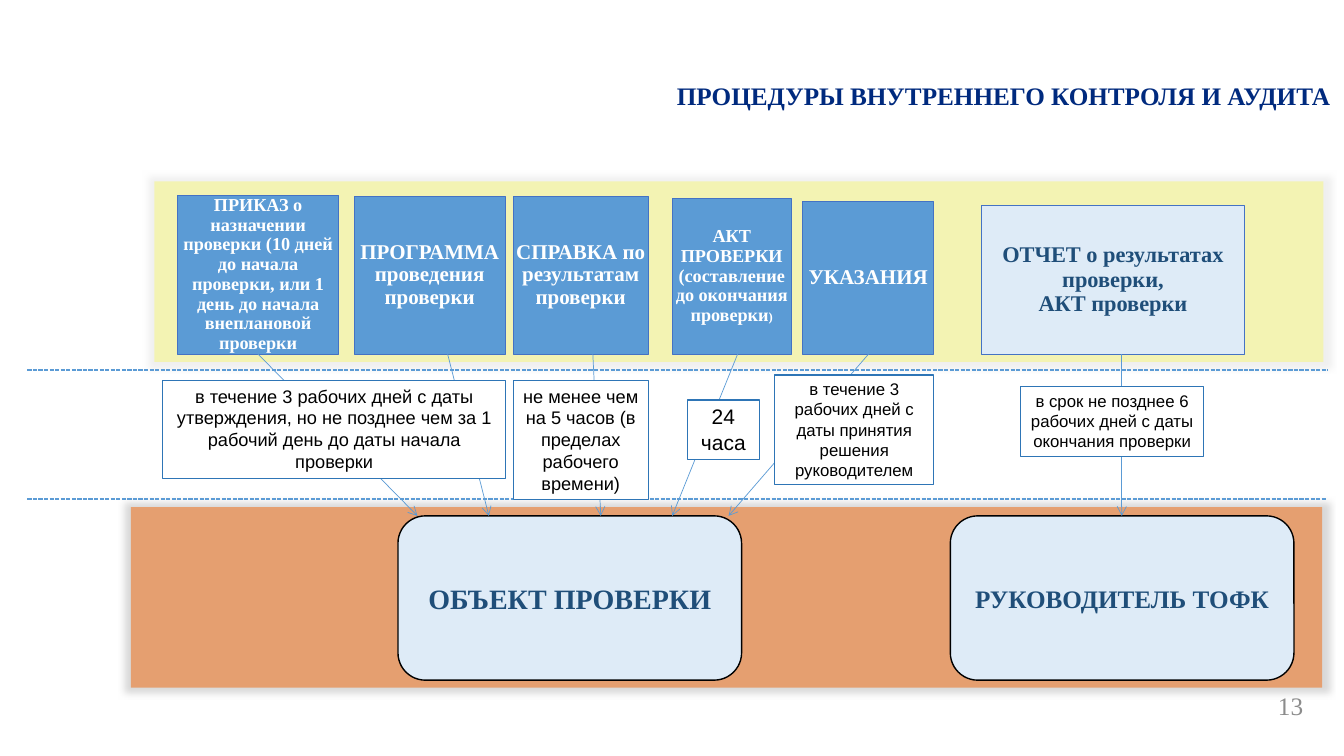
from lxml import etree
from pptx import Presentation
from pptx.dml.color import RGBColor
from pptx.enum.dml import MSO_LINE
from pptx.enum.shapes import MSO_CONNECTOR, MSO_SHAPE
from pptx.enum.text import MSO_ANCHOR, PP_ALIGN
from pptx.oxml.ns import qn
from pptx.util import Cm, Pt

RECT, ROUND = MSO_SHAPE.RECTANGLE, MSO_SHAPE.ROUNDED_RECTANGLE
MIDDLE, TOP = MSO_ANCHOR.MIDDLE, MSO_ANCHOR.TOP
CENTER, RIGHT = PP_ALIGN.CENTER, PP_ALIGN.RIGHT
STRAIGHT, DASH = MSO_CONNECTOR.STRAIGHT, MSO_LINE.SQUARE_DOT
SERIF, SANS = "Times New Roman", "Arial"
BLUE, PALE, NAVY, WHITE = "5B9BD5", "DEEBF7", "1F4E79", "FFFFFF"

prs = Presentation()
prs.slide_width, prs.slide_height = Cm(33.87), Cm(19.05)
slide = prs.slides.add_slide(prs.slide_layouts[6])
shapes = slide.shapes
rgb = RGBColor.from_string


def box(kind, place, fill, edge=None, width=0.5):
    shape = shapes.add_shape(kind, *map(Cm, place))
    shape.shadow.inherit = False
    shape.fill.solid()
    shape.fill.fore_color.rgb = rgb(fill)
    if edge:
        shape.line.color.rgb = rgb(edge)
        shape.line.width = Pt(width)
    else:
        shape.line.fill.background()
    return shape


def write(shape, text, size, color, font=SERIF, bold=True, align=CENTER,
          anchor=MIDDLE, pad=(0.2, 0.1)):
    frame = shape.text_frame
    frame.word_wrap = True
    frame.vertical_anchor = anchor
    frame.margin_left = frame.margin_right = Cm(pad[0])
    frame.margin_top = frame.margin_bottom = Cm(pad[1])
    frame.text = text
    para = frame.paragraphs[0]
    para.alignment = align
    para.font.name, para.font.size, para.font.bold = font, Pt(size), bold
    para.font.color.rgb = rgb(color)
    return para


# Background bands: translucent fill over a soft grey shadow
bands = [
    ((3.3, 12.78, 30.02, 4.55), "ED7D31", 62),
    ((3.89, 4.57, 29.46, 4.55), "FFFF00", 25),
]
for place, fill, alpha in bands:
    band = box(RECT, place, fill)
    props = band._element.spPr
    tone = props.find(qn("a:solidFill"))[0]
    etree.SubElement(tone, qn("a:alpha"), val=str(alpha * 1000))
    glow = etree.SubElement(props.find(qn("a:effectLst")), qn("a:outerShdw"),
                            blurRad="63500", sx="101000", sy="105000",
                            algn="ctr", rotWithShape="0")
    etree.SubElement(glow, qn("a:srgbClr"), val="C2C2C2")

# Title and page number
title = shapes.add_textbox(Cm(10.72), Cm(1.93), Cm(23.01), Cm(0.99))
write(title, "ПРОЦЕДУРЫ ВНУТРЕННЕГО КОНТРОЛЯ И АУДИТА", 18, "002A7E",
      align=RIGHT, anchor=TOP)
page = shapes.add_textbox(Cm(31.72), Cm(17.27), Cm(1.37), Cm(1.02))
write(page, "13", 18, "8C8C8C", bold=False, align=RIGHT, pad=(0.25, 0.13))

# Documents, all standing on one base line
BASE = 8.92
docs = [
    (4.48, 4.92, 4.05, 13, "ПРИКАЗ о назначении проверки (10 дней до начала "
     "проверки, или 1 день до начала внеплановой проверки"),
    (8.93, 4.95, 3.8, 15, "ПРОГРАММА проведения проверки"),
    (12.93, 4.95, 3.41, 15, "СПРАВКА по результатам проверки"),
    (16.94, 5, 3, 13, "АКТ ПРОВЕРКИ (составление до окончания проверки"),
    (20.23, 5.08, 3.3, 15, "УКАЗАНИЯ"),
    (24.74, 5.18, 6.62, 16, "ОТЧЕТ о результатах проверки,\vАКТ проверки"),
]
for x, y, w, size, text in docs:
    report = text.startswith("ОТЧЕТ")
    card = box(RECT, (x, y, w, BASE - y), PALE if report else BLUE, "4472C4")
    para = write(card, text, size, NAVY if report else WHITE, pad=(0.03, 0.03))
    para.line_spacing = 0.9
    if text.startswith("АКТ"):
        mark = para.add_run()
        mark.text = ")"
        mark.font.size = Pt(9)

# Recipients
GOAL = 13
for x, size, text in [(10.03, 20, "ОБЪЕКТ ПРОВЕРКИ"),
                      (23.95, 18, "РУКОВОДИТЕЛЬ ТОФК")]:
    card = box(ROUND, (x, GOAL, 8.66, 4.14), PALE, "000000", 1)
    write(card, text, size, NAVY, pad=(0.25, 0.13))

# Dashed dividers, then arrows from documents to recipients
lines = [(0.69, 9.32, 33.48, 9.32, True), (0.69, 12.57, 33.43, 12.57, True)]
ends = [(6.5, 10.52), (11.28, 12.32), (14.94, 15.14),
        (18.59, 16.94), (21.89, 18.36), (28.27, 28.27)]
lines += [(start, BASE, end, GOAL, False) for start, end in ends]
for x1, y1, x2, y2, dashed in lines:
    line = shapes.add_connector(STRAIGHT, Cm(x1), Cm(y1), Cm(x2), Cm(y2))
    line.line.color.rgb = rgb(BLUE)
    line.line.width = Pt(1 if dashed else 0.5)
    if dashed:
        line.line.dash_style = DASH
    else:
        etree.SubElement(line.line._get_or_add_ln(), qn("a:tailEnd"),
                         type="arrow")
    etree.SubElement(line._element.spPr, qn("a:effectLst"))

# Deadlines over the arrows
notes = [
    ((25.73, 9.75, 4.6, 1.76), 12,
     "в срок не позднее 6 рабочих дней с даты окончания проверки"),
    ((4.09, 9.6, 8.66, 2.45), 13, "в течение 3 рабочих дней с даты утверждения, "
     "но не позднее чем за 1 рабочий день до даты начала проверки"),
    ((12.93, 9.6, 3.41, 3), 13,
     "не менее чем на 5 часов (в пределах рабочего времени)"),
    ((19.53, 9.45, 4, 2.77), 12,
     "в течение 3 рабочих дней с даты принятия решения руководителем"),
    ((17.32, 10.08, 1.82, 1.5), 15, "24 часа"),
]
for place, size, text in notes:
    note = box(RECT, place, WHITE, "2E75B6", 0.75)
    write(note, text, size, "000000", SANS, False, anchor=TOP)

prs.save("out.pptx")
